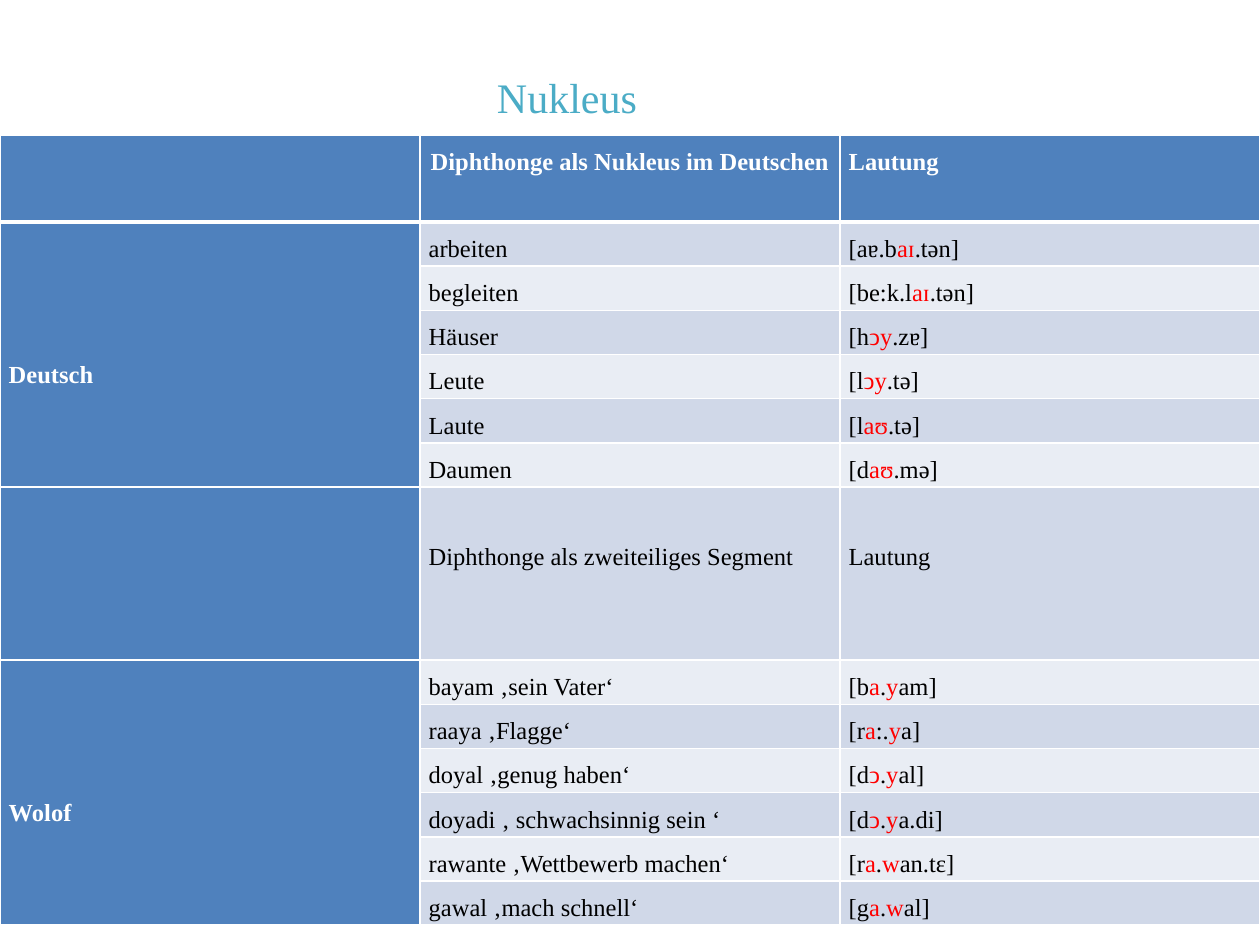
import pptx
import pptx.util
import pptx.dml.color
import pptx.enum.text
import pptx.oxml

Pt = pptx.util.Pt
ALIGN = pptx.enum.text.PP_ALIGN
FACE = "Times New Roman"
BLUE, WHITE, BLACK, RED = "4F81BD", "FFFFFF", "000000", "FF0000"
BANDS = ["E9EDF4", "D0D8E8"]
LINE = 24.75  # height of a word row
SPLIT = 7  # row between the two languages

# Sounds between asterisks are red.
GERMAN = [
    ("arbeiten", "[aɐ.b*aɪ*.tәn]"),
    ("begleiten", "[be:k.l*aɪ*.tәn]"),
    ("Häuser", "[h*ↄy*.zɐ]"),
    ("Leute", "[l*ↄy*.tә]"),
    ("Laute", "[l*aʊ*.tә]"),
    ("Daumen", "[d*aʊ*.mә]"),
]
WOLOF = [
    ("bayam ‚sein Vater‘", "[b*a*.*y*am]"),
    ("raaya ‚Flagge‘", "[r*a*:.*y*a]"),
    ("doyal ‚genug haben‘", "[d*ↄ*.*y*al]"),
    ("doyadi ‚ schwachsinnig sein ‘", "[d*ↄ*.*y*a.di]"),
    ("rawante ‚Wettbewerb machen‘", "[r*a*.*w*an.tε]"),
    ("gawal ‚mach schnell‘", "[g*a*.*w*al]"),
]
ROWS = [
    ("", "Diphthonge als Nukleus im Deutschen", "Lautung"),
    *[("" if i else "Deutsch", *pair) for i, pair in enumerate(GERMAN)],
    ("", "Diphthonge als zweiteiliges Segment", "Lautung"),
    *[("" if i else "Wolof", *pair) for i, pair in enumerate(WOLOF)],
]


def rgb(code):
    return pptx.dml.color.RGBColor.from_string(code)


def style(para, size, color, bold=False, align=ALIGN.LEFT):
    para.alignment = align
    font = para.font
    font.name, font.size, font.bold = FACE, Pt(size), bold
    font.color.rgb = rgb(color)


def write(para, text):
    """Add the text, with every second part between asterisks in red."""
    for i, part in enumerate(text.split("*")):
        if part:
            run = para.add_run()
            run.text = part
            if i % 2:
                run.font.color.rgb = rgb(RED)


def edge(cell, side, width):
    props = cell._tc.get_or_add_tcPr()
    props.append(pptx.oxml.parse_xml(
        '<a:ln%s xmlns:a="http://schemas.openxmlformats.org/drawingml/2006/main"'
        ' w="%d"><a:solidFill><a:srgbClr val="%s"/></a:solidFill></a:ln%s>'
        % (side, Pt(width), WHITE, side)))


def fill_cell(cell, row, col, text):
    head = row == 0 or col == 0
    cell.margin_left = cell.margin_right = Pt(5)
    cell.margin_top = cell.margin_bottom = 0
    if col == 0 and text:
        cell.margin_top = Pt(3 * LINE - 2)
    elif row == SPLIT and text:
        cell.margin_top = Pt(LINE)
    for side in "LRTB":
        heavy = (row, side) in ((0, "B"), (1, "T"))
        edge(cell, side, 3 if heavy else 1)
    cell.fill.solid()
    cell.fill.fore_color.rgb = rgb(BLUE if head else BANDS[row % 2])
    para = cell.text_frame.paragraphs[0]
    align = ALIGN.CENTER if (row, col) == (0, 1) else ALIGN.LEFT
    style(para, 14, WHITE if head else BLACK, head, align)
    para.line_spacing = 1.5
    write(para, text)


def add_title(slide, text):
    box = slide.shapes.add_textbox(0, Pt(21.6), Pt(648), Pt(67))
    frame = box.text_frame
    frame.word_wrap = True
    frame.vertical_anchor = pptx.enum.text.MSO_ANCHOR.MIDDLE
    para = frame.paragraphs[0]
    style(para, 24, "4BACC6", align=ALIGN.CENTER)
    write(para, text)


def add_grid(slide):
    tall = {0: 2 * LINE, SPLIT: 4 * LINE}
    highs = [tall.get(row, LINE) for row in range(len(ROWS))]
    grid = slide.shapes.add_table(
        len(ROWS), 3, 0, Pt(77.4), Pt(720), Pt(sum(highs))).table
    for row, (high, texts) in enumerate(zip(highs, ROWS)):
        grid.rows[row].height = Pt(high)
        for col, text in enumerate(texts):
            fill_cell(grid.cell(row, col), row, col, text)
    for top in (1, SPLIT + 1):
        grid.cell(top, 0).merge(grid.cell(top + 5, 0))


def main():
    deck = pptx.Presentation()
    deck.slide_width, deck.slide_height = Pt(720), Pt(540)
    slide = deck.slides.add_slide(deck.slide_layouts[6])
    add_title(slide, "Nukleus")
    add_grid(slide)
    deck.save("out.pptx")


if __name__ == "__main__":
    main()
